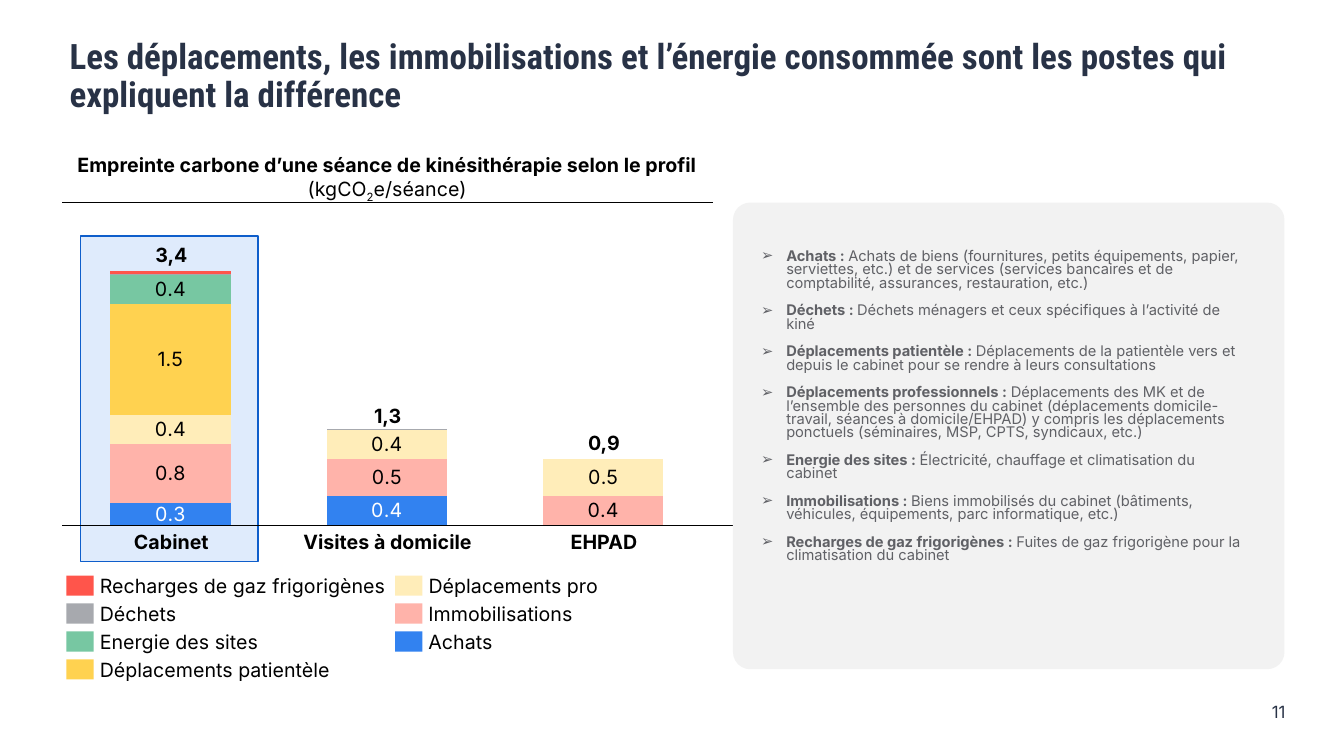
"""Build the slide comparing the carbon footprint of physiotherapy sessions."""
from dataclasses import dataclass

import lxml.etree
import pptx
import pptx.chart.data
import pptx.dml.color
import pptx.enum.chart
import pptx.enum.shapes
import pptx.enum.text
import pptx.oxml
import pptx.oxml.ns
import pptx.util

Inches = pptx.util.Inches
Pt = pptx.util.Pt
RGBColor = pptx.dml.color.RGBColor
Align = pptx.enum.text.PP_ALIGN
Anchor = pptx.enum.text.MSO_ANCHOR
Shape = pptx.enum.shapes.MSO_SHAPE
qn = pptx.oxml.ns.qn

NAVY = RGBColor(0x28, 0x32, 0x46)
BLACK = RGBColor(0, 0, 0)
GREY_TEXT = RGBColor(0x60, 0x61, 0x66)
WHITE = RGBColor(0xFF, 0xFF, 0xFF)
PANEL_GREY = RGBColor(0xF2, 0xF2, 0xF2)
HIGHLIGHT = RGBColor(0xAD, 0xCD, 0xF9)
HIGHLIGHT_EDGE = RGBColor(0x0E, 0x5E, 0xCB)
BLUE = RGBColor(0x32, 0x82, 0xF0)
PINK = RGBColor(0xFF, 0xB3, 0xAA)
CREAM = RGBColor(0xFF, 0xED, 0xB9)
YELLOW = RGBColor(0xFF, 0xD2, 0x50)
GREEN = RGBColor(0x77, 0xC7, 0xA2)
GREY = RGBColor(0xA7, 0xA9, 0xAE)
RED = RGBColor(0xFF, 0x55, 0x4B)

EHPAD = 2
Box = tuple[float, float, float, float]


@dataclass(frozen=True)
class Run:
    text: str
    bold: bool = False
    baseline: int = 0


@dataclass(frozen=True)
class Profile:
    name: str
    name_width: float
    total: str
    total_top: float


@dataclass(frozen=True)
class Source:
    name: str
    color: RGBColor
    name_width: float


@dataclass(frozen=True)
class Layer:
    values: tuple[float, float, float]
    labelled: int = 0


PROFILES = (
    Profile("Cabinet", 0.76, "3,4", 2.44),
    Profile("Visites à domicile", 1.68, "1,3", 4.03),
    Profile("EHPAD", 0.68, "0,9", 4.3),
)
SOURCES = (
    Source("Achats", BLUE, 0.64),
    Source("Immobilisations", PINK, 1.43),
    Source("Déplacements pro", CREAM, 1.68),
    Source("Déplacements patientèle", YELLOW, 2.29),
    Source("Energie des sites", GREEN, 1.57),
    Source("Déchets", GREY, 0.76),
    Source("Recharges de gaz frigorigènes", RED, 2.81),
)
LAYERS = (
    Layer((0.3, 0.4, 0.4), 3),
    Layer((0.8, 0.5, 0.5), 3),
    Layer((0.4, 0.4, 0), 2),
    Layer((1.5, 0, 0), 1),
    Layer((0.4, 0, 0), 1),
    Layer((0.01, 0.01, 0)),
    Layer((0.04, 0, 0)),
    Layer((0, 0, 0)),
)
LAYER_COLORS = [source.color for source in SOURCES] + [NAVY]
DEFINITIONS = (
    ("Achats : ", "Achats de biens (fournitures, petits équipements, papier, serviettes, etc.) et de services "
     "(services bancaires et de comptabilité, assurances, restauration, etc.)"),
    ("Déchets : ", "Déchets ménagers et ceux spécifiques à l’activité de kiné"),
    ("Déplacements patientèle : ", "Déplacements de la patientèle vers et depuis le cabinet pour se rendre à "
     "leurs consultations"),
    ("Déplacements professionnels : ", "Déplacements des MK et de l’ensemble des personnes du cabinet "
     "(déplacements domicile-travail, séances à domicile/EHPAD) y compris les déplacements ponctuels "
     "(séminaires, MSP, CPTS, syndicaux, etc.)"),
    ("Energie des sites : ", "Électricité, chauffage et climatisation du cabinet"),
    ("Immobilisations : ", "Biens immobilisés du cabinet (bâtiments, véhicules, équipements, parc "
     "informatique, etc.)"),
    ("Recharges de gaz frigorigènes : ", "Fuites de gaz frigorigène pour la climatisation du cabinet"),
)


def lengths(box: Box) -> list[int]:
    return [Inches(value) for value in box]


def add_bullet(paragraph, color: RGBColor) -> None:
    properties = paragraph._p.get_or_add_pPr()
    properties.set("marL", str(Inches(0.25)))
    properties.set("indent", str(-Inches(0.25)))
    bullet_color = lxml.etree.SubElement(properties, qn("a:buClr"))
    lxml.etree.SubElement(bullet_color, qn("a:srgbClr"), val=str(color))
    lxml.etree.SubElement(properties, qn("a:buFont"), typeface="Inter")
    lxml.etree.SubElement(properties, qn("a:buChar"), char="➢")


def write(slide, box: Box, paragraphs: list[list[Run]], *, holder=None, size: float = 14, font: str = "Inter",
          color: RGBColor = BLACK, align=Align.LEFT, anchor=Anchor.TOP, spacing=None, space_before: float = 0,
          inset: tuple[float, float] = (0, 0), wrap: bool = True, bullets: bool = False) -> None:
    holder = holder or slide.shapes.add_textbox(*lengths(box))
    holder.left, holder.top, holder.width, holder.height = lengths(box)
    frame = holder.text_frame
    frame.word_wrap = wrap
    frame.auto_size = pptx.enum.text.MSO_AUTO_SIZE.NONE
    frame.vertical_anchor = anchor
    frame.margin_left = frame.margin_right = Inches(inset[0])
    frame.margin_top = frame.margin_bottom = Inches(inset[1])
    for index, runs in enumerate(paragraphs):
        paragraph = frame.add_paragraph() if index else frame.paragraphs[0]
        if bullets:
            add_bullet(paragraph, color)
        paragraph.alignment, paragraph.line_spacing = align, spacing
        paragraph.space_before = Pt(space_before if index else 0)
        for item in runs:
            run = paragraph.add_run()
            run.text = item.text
            run.font.name, run.font.size, run.font.bold = font, Pt(size), item.bold
            run.font.color.rgb = color
            if item.baseline:
                run._r.get_or_add_rPr().set("baseline", str(item.baseline * 1000))


def add_block(slide, box: Box, color: RGBColor, kind=Shape.RECTANGLE):
    block = slide.shapes.add_shape(kind, *lengths(box))
    block.shadow.inherit = False
    fill_with(block, color)
    block.line.fill.background()
    return block


def fill_with(target, color: RGBColor) -> None:
    target.fill.solid()
    target.fill.fore_color.rgb = color


def add_highlight(slide) -> None:
    highlight = add_block(slide, (0.8, 2.34, 1.76, 3.23), HIGHLIGHT)
    tint = highlight._element.spPr.find(qn("a:solidFill"))[0]
    lxml.etree.SubElement(tint, qn("a:alpha"), val="38000")
    highlight.line.color.rgb = HIGHLIGHT_EDGE
    highlight.line.width = Pt(1)


def add_footprint_chart(slide) -> None:
    data = pptx.chart.data.CategoryChartData(number_format="0.0")
    data.categories = [profile.name for profile in PROFILES] + [""]
    for rank, layer in enumerate(LAYERS, 1):
        data.add_series(f"Series {rank}", layer.values + (None,))
    chart = slide.shapes.add_chart(pptx.enum.chart.XL_CHART_TYPE.COLUMN_STACKED,
                                   *lengths((0.53, 2.34, 8.77, 3.21)), data).chart
    chart.has_legend = chart.has_title = False
    chart.font.name, chart.font.size, chart.font.color.rgb = "Inter", Pt(10), BLACK
    category_axis, value_axis = chart.category_axis, chart.value_axis
    category_axis.tick_label_position = pptx.enum.chart.XL_TICK_LABEL_POSITION.NONE
    category_axis.major_tick_mark = pptx.enum.chart.XL_TICK_MARK.NONE
    category_axis.format.line.color.rgb = BLACK
    category_axis.format.line.width = Pt(0.75)
    value_axis.minimum_scale, value_axis.maximum_scale = 0, 3.47
    value_axis.has_major_gridlines = value_axis.visible = False
    plot = chart.plots[0]
    plot.gap_width, plot.overlap, plot.vary_by_categories = 80, 100, False
    for rank, (layer, series) in enumerate(zip(LAYERS, plot.series)):
        fill_with(series.format, LAYER_COLORS[rank])
        fill_with(series.points[EHPAD].format, LAYER_COLORS[(rank + 1) % len(LAYERS)])
        if layer.labelled:
            labels = series.data_labels
            labels.show_value = True
            labels.number_format, labels.number_format_is_linked = "0.0;;", False
            labels.position = pptx.enum.chart.XL_LABEL_POSITION.CENTER
            labels.font.name, labels.font.size = "Inter", Pt(14)
            labels.font.color.rgb = BLACK if rank else WHITE
    ehpad_font = plot.series[0].points[EHPAD].data_label.font
    ehpad_font.name, ehpad_font.size, ehpad_font.color.rgb = "Inter", Pt(14), BLACK
    plot_area = chart._chartSpace.chart.plotArea
    for previous in plot_area.findall(qn("c:layout")):
        plot_area.remove(previous)
    layout = lxml.etree.Element(qn("c:layout"))
    manual = lxml.etree.SubElement(layout, qn("c:manualLayout"))
    for tag, value in (("layoutTarget", "inner"), ("xMode", "edge"), ("yMode", "edge"),
                       ("x", "0.01"), ("y", "0.104"), ("w", "0.979"), ("h", "0.791")):
        lxml.etree.SubElement(manual, qn(f"c:{tag}"), val=value)
    plot_area.insert(0, layout)


def add_profile_labels(slide) -> None:
    for index, profile in enumerate(PROFILES):
        center = 1.7 + 2.145 * index
        for text, top, width in ((profile.name, 5.28, profile.name_width), (profile.total, profile.total_top, 0.37)):
            write(slide, (center - width / 2, top, width, 0.21), [[Run(text, True)]],
                  align=Align.CENTER, spacing=0.9, wrap=False)


def add_legend(slide) -> None:
    for index, source in enumerate(reversed(SOURCES)):
        column, row = divmod(index, 4)
        left, top = 0.66 + 3.26 * column, 5.71 + 0.277 * row
        add_block(slide, (left, top, 0.27, 0.2), source.color)
        write(slide, (left + 0.33, top + 0.01, source.name_width, 0.21), [[Run(source.name)]],
              anchor=Anchor.MIDDLE, spacing=0.9, wrap=False)


def add_definitions(slide) -> None:
    panel = add_block(slide, (7.27, 2.01, 5.47, 4.63), PANEL_GREY, Shape.ROUNDED_RECTANGLE)
    panel.adjustments[0] = 0.037
    write(slide, (7.45, 2.44, 4.98, 3.83), [[Run(term, True), Run(meaning)] for term, meaning in DEFINITIONS],
          size=10.5, color=GREY_TEXT, spacing=Pt(9.6), space_before=10, inset=(0.1, 0.05), bullets=True)


def main() -> None:
    deck = pptx.Presentation()
    deck.slide_width, deck.slide_height = Inches(13.33), Inches(7.5)
    slide = deck.slides.add_slide(deck.slide_layouts[5])
    write(slide, (0.59, 0.34, 12.16, 0.98),
          [[Run("Les déplacements, les immobilisations et l’énergie consommée sont les postes qui "
                "expliquent la différence", True)]],
          holder=slide.shapes.title, size=25, font="Roboto Condensed", color=NAVY, spacing=0.9, inset=(0.1, 0.05))
    write(slide, (12.19, 6.94, 0.56, 0.25), [[Run("11")]], size=12, color=NAVY,
          align=Align.RIGHT, anchor=Anchor.MIDDLE)
    add_highlight(slide)
    add_footprint_chart(slide)
    add_profile_labels(slide)
    write(slide, (0.62, 1.47, 6.44, 0.43),
          [[Run("Empreinte carbone d’une séance de kinésithérapie selon le profil ", True),
            Run("(kgCO"), Run("2", baseline=-25), Run("e/séance)")]],
          align=Align.CENTER, inset=(0.1, 0.05))
    heading_rule = slide.shapes.add_connector(pptx.enum.shapes.MSO_CONNECTOR.STRAIGHT,
                                              *lengths((0.62, 2.01, 7.07, 2.01)))
    heading_rule.line.color.rgb = BLACK
    heading_rule.line.width = Pt(0.5)
    lxml.etree.SubElement(heading_rule._element.spPr, qn("a:effectLst"))
    add_legend(slide)
    add_definitions(slide)
    deck.save("out.pptx")


if __name__ == "__main__":
    main()
